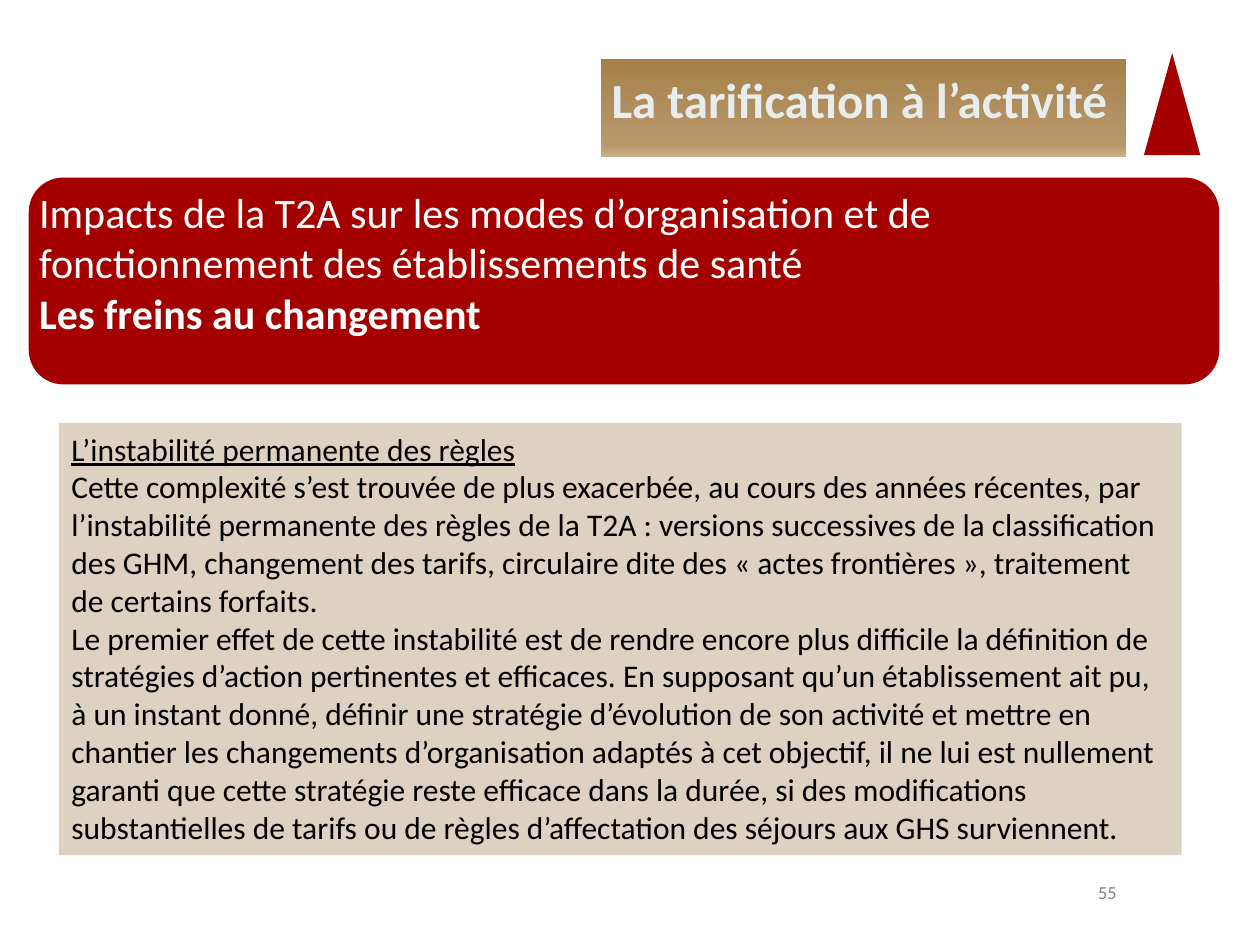
from copy import deepcopy
from dataclasses import dataclass
from typing import NamedTuple

from pptx import Presentation
from pptx.dml.color import RGBColor
from pptx.enum.shapes import MSO_SHAPE
from pptx.enum.text import MSO_ANCHOR, MSO_AUTO_SIZE, PP_ALIGN
from pptx.oxml.ns import qn
from pptx.util import Cm, Pt


@dataclass(frozen=True)
class Theme:
    font: str = "Calibri"
    red: str = "A40000"
    beige: str = "DDD1C1"
    title_text: str = "E7ECED"
    white: str = "FFFFFF"
    black: str = "000000"
    grey: str = "808080"
    title_gradient: tuple = ((0, "CCB08E"), (0.12, "B9986D"), (1, "A58048"))
    title_size: float = 28
    heading_size: float = 24
    body_size: float = 18
    number_size: float = 10.5


class Box(NamedTuple):
    left: float
    top: float
    width: float
    height: float

    def lengths(self) -> list:
        return [Cm(value) for value in self]


class Line(NamedTuple):
    text: str
    bold: bool = False
    underline: bool = False


THEME = Theme()

TITLE_BOX = Box(12.12, 1.19, 10.57, 1.98)
TRIANGLE_BOX = Box(23.06, 1.07, 1.14, 2.06)
BANNER_BOX = Box(0.58, 3.58, 24, 4.17)
HEADING_BOX = Box(0.79, 3.76, 23.22, 3.07)
BODY_BOX = Box(1.19, 8.53, 22.63, 8.71)
NUMBER_BOX = Box(21.59, 17.78, 1.47, 0.43)

HEADING = [
    Line("Impacts de la T2A sur les modes d’organisation et de fonctionnement "
         "des établissements de santé"),
    Line("Les freins au changement", bold=True),
]
BODY = [
    Line("L’instabilité permanente des règles", underline=True),
    Line("Cette complexité s’est trouvée de plus exacerbée, au cours des années récentes, par"),
    Line("l’instabilité permanente des règles de la T2A : versions successives de la "
         "classification des GHM, changement des tarifs, circulaire dite des « actes "
         "frontières », traitement de certains forfaits."),
    Line("Le premier effet de cette instabilité est de rendre encore plus difficile "
         "la définition de"),
    Line("stratégies d’action pertinentes et efficaces. En supposant qu’un établissement "
         "ait pu, à un instant donné, définir une stratégie d’évolution de son activité et "
         "mettre en chantier les changements d’organisation adaptés à cet objectif, il ne "
         "lui est nullement garanti que cette stratégie reste efficace dans la durée, si "
         "des modifications substantielles de tarifs ou de règles d’affectation des "
         "séjours aux GHS surviennent."),
]


def write_text(shape, lines: list[Line], *, size: float, color: str,
               align=PP_ALIGN.LEFT, anchor=MSO_ANCHOR.TOP,
               margins: tuple = (0.25, 0.13), line_spacing: float = 1.0) -> None:
    """Fill a shape with one paragraph per line; margins are horizontal and vertical."""
    frame = shape.text_frame
    frame.word_wrap = True
    frame.auto_size = MSO_AUTO_SIZE.NONE
    frame.vertical_anchor = anchor
    frame.margin_left = frame.margin_right = Cm(margins[0])
    frame.margin_top = frame.margin_bottom = Cm(margins[1])
    for index, line in enumerate(lines):
        paragraph = frame.add_paragraph() if index else frame.paragraphs[0]
        paragraph.alignment = align
        paragraph.line_spacing = line_spacing
        run = paragraph.add_run()
        run.text = line.text
        font = run.font
        font.name = THEME.font
        font.size = Pt(size)
        font.bold = line.bold
        font.underline = line.underline
        font.color.rgb = RGBColor.from_string(color)


def add_filled_shape(slide, kind: MSO_SHAPE, box: Box, color: str):
    shape = slide.shapes.add_shape(kind, *box.lengths())
    shape.shadow.inherit = False
    shape.fill.solid()
    shape.fill.fore_color.rgb = RGBColor.from_string(color)
    shape.line.fill.background()
    return shape


def add_text_box(slide, box: Box, lines: list[Line], **text_format) -> None:
    write_text(slide.shapes.add_textbox(*box.lengths()), lines, **text_format)


def fill_with_gradient(shape, stops: tuple) -> None:
    """Fill a shape with a gradient that runs from bottom to top."""
    fill = shape.fill
    fill.gradient()
    fill.gradient_angle = 90
    stop_list = next(shape.element.iter(qn("a:gsLst")))
    while len(stop_list) < len(stops):
        stop_list.append(deepcopy(stop_list[0]))
    for stop, (position, color) in zip(fill.gradient_stops, stops):
        stop.position = position
        stop.color.rgb = RGBColor.from_string(color)


def format_title(slide) -> None:
    title = slide.shapes.title
    title.left, title.top, title.width, title.height = TITLE_BOX.lengths()
    fill_with_gradient(title, THEME.title_gradient)
    write_text(title, [Line("La tarification à l’activité ", bold=True)],
               size=THEME.title_size, color=THEME.title_text, align=PP_ALIGN.RIGHT,
               anchor=MSO_ANCHOR.MIDDLE, margins=(0.15, 0.08), line_spacing=0.6)


def main() -> None:
    presentation = Presentation()
    presentation.slide_width, presentation.slide_height = Cm(25.4), Cm(19.05)
    slide = presentation.slides.add_slide(presentation.slide_layouts[5])

    format_title(slide)
    add_filled_shape(slide, MSO_SHAPE.ISOSCELES_TRIANGLE, TRIANGLE_BOX, THEME.red)
    add_filled_shape(slide, MSO_SHAPE.ROUNDED_RECTANGLE, BANNER_BOX, THEME.red)
    body = add_filled_shape(slide, MSO_SHAPE.RECTANGLE, BODY_BOX, THEME.beige)
    write_text(body, BODY, size=THEME.body_size, color=THEME.black)
    add_text_box(slide, NUMBER_BOX, [Line("55")], size=THEME.number_size,
                 color=THEME.grey, align=PP_ALIGN.CENTER, anchor=MSO_ANCHOR.MIDDLE)
    add_text_box(slide, HEADING_BOX, HEADING, size=THEME.heading_size,
                 color=THEME.white, margins=(0, 0))

    presentation.save("out.pptx")


if __name__ == "__main__":
    main()
